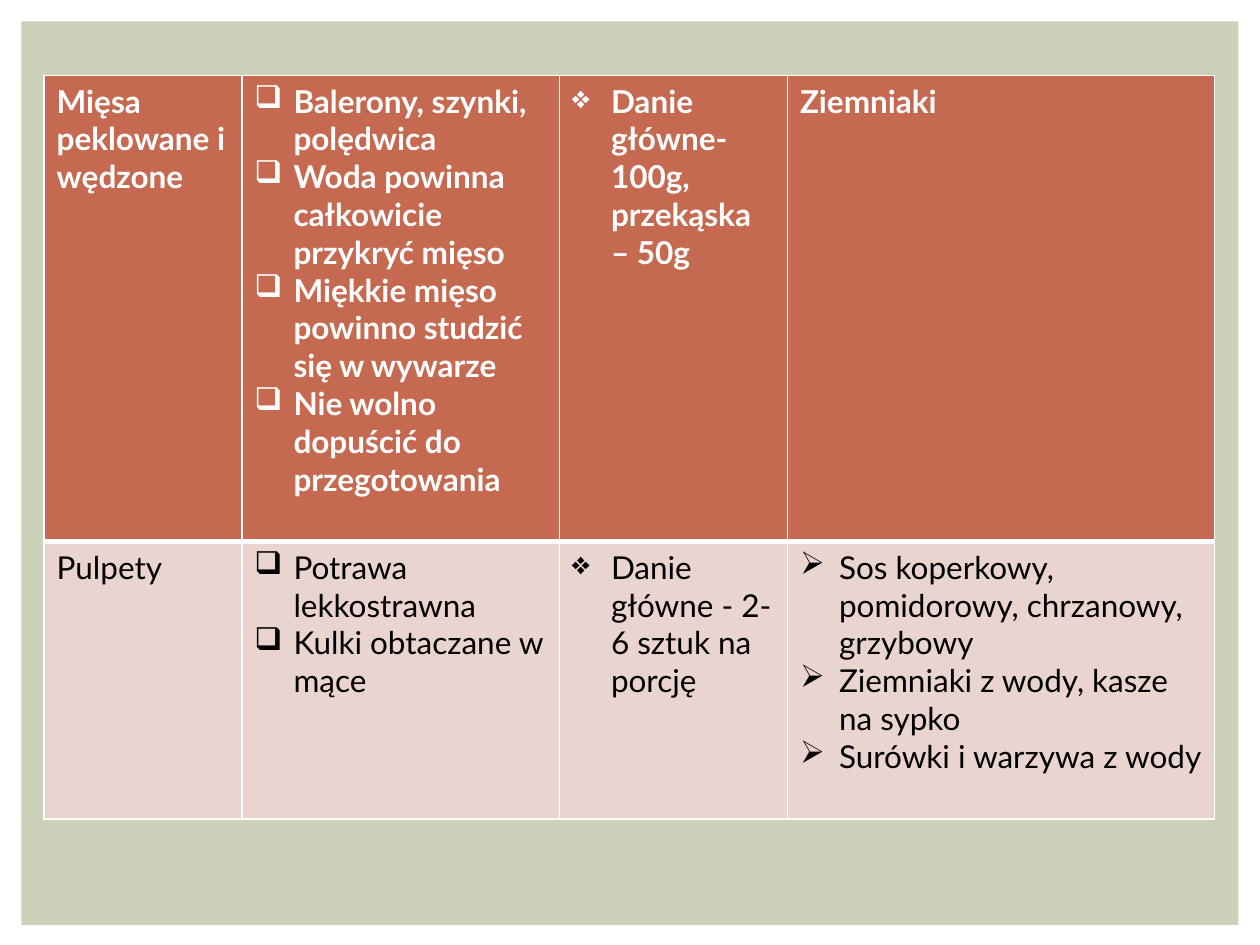
import pptx
import pptx.util
import pptx.dml.color
import pptx.enum.shapes
import lxml.etree

RGB = pptx.dml.color.RGBColor
SAGE = RGB(0xCC, 0xD1, 0xB9)
RUST = RGB(0xC6, 0x69, 0x51)
PINK = RGB(0xEA, 0xD4, 0xD0)
WHITE = RGB(0xFF, 0xFF, 0xFF)
BLACK = RGB(0, 0, 0)

deck = pptx.Presentation()
deck.slide_width = pptx.util.Inches(10)
deck.slide_height = pptx.util.Inches(7.5)
unit = deck.slide_width // 100
slide = deck.slides.add_slide(deck.slide_layouts[6])


def add_node(parent, tag, place=None, **attrs):
    node = lxml.etree.Element(pptx.oxml.ns.qn(tag), **attrs)
    parent.insert(len(parent) if place is None else place, node)
    return node


def set_edges(cell, sizes):
    props = cell._tc.get_or_add_tcPr()
    for place, (side, size) in enumerate(zip("LRTB", sizes)):
        line = add_node(props, f"a:ln{side}", place, w=str(pptx.util.Pt(size)))
        fill = add_node(line, "a:solidFill")
        add_node(fill, "a:srgbClr", val=str(WHITE))


box = [int(n * unit) for n in (1.7, 1.7, 96.6, 71.7)]
panel = slide.shapes.add_shape(pptx.enum.shapes.MSO_SHAPE.RECTANGLE, *box)
panel.shadow.inherit = False
panel.fill.solid()
panel.fill.fore_color.rgb = SAGE
panel.line.fill.background()

cols = [15.7, 25.2, 18.1, 33.9]
rows = [37, 22]
marks = [
    ["", "❑", "❖", ""],
    ["", "❑", "❖", "➢"],
]
texts = [
    [
        ["Mięsa peklowane i wędzone"],
        [
            "Balerony, szynki, polędwica",
            "Woda powinna całkowicie przykryć mięso",
            "Miękkie mięso powinno studzić się w wywarze",
            "Nie wolno dopuścić do przegotowania",
        ],
        ["Danie główne- 100g, przekąska – 50g"],
        ["Ziemniaki"],
    ],
    [
        ["Pulpety"],
        ["Potrawa lekkostrawna", "Kulki obtaczane w mące"],
        ["Danie główne - 2-6 sztuk na porcję"],
        [
            "Sos koperkowy, pomidorowy, chrzanowy, grzybowy",
            "Ziemniaki z wody, kasze na sypko",
            "Surówki i warzywa z wody",
        ],
    ],
]
styles = [(RUST, WHITE, True, (1, 1, 1, 3)), (PINK, BLACK, False, (1, 1, 3, 1))]

box = [int(n * unit) for n in (3.5, 6, sum(cols), sum(rows))]
table = slide.shapes.add_table(len(rows), len(cols), *box).table
for col, wide in zip(table.columns, cols):
    col.width = int(wide * unit)
for row, high in zip(table.rows, rows):
    row.height = int(high * unit)

for r, (back, ink, bold, edges) in enumerate(styles):
    for c, lines in enumerate(texts[r]):
        cell = table.cell(r, c)
        cell.fill.solid()
        cell.fill.fore_color.rgb = back
        set_edges(cell, edges)
        cell.text = "\n".join(lines)
        for para in cell.text_frame.paragraphs:
            para.font.name = "Lato"
            para.font.size = pptx.util.Pt(18)
            para.font.bold = bold
            para.font.color.rgb = ink
            if marks[r][c]:
                props = para._p.get_or_add_pPr()
                indent = int(3.1 * unit)
                props.set("marL", str(indent))
                props.set("indent", str(-indent))
                add_node(props, "a:buChar", 0, char=marks[r][c])

deck.save("out.pptx")
